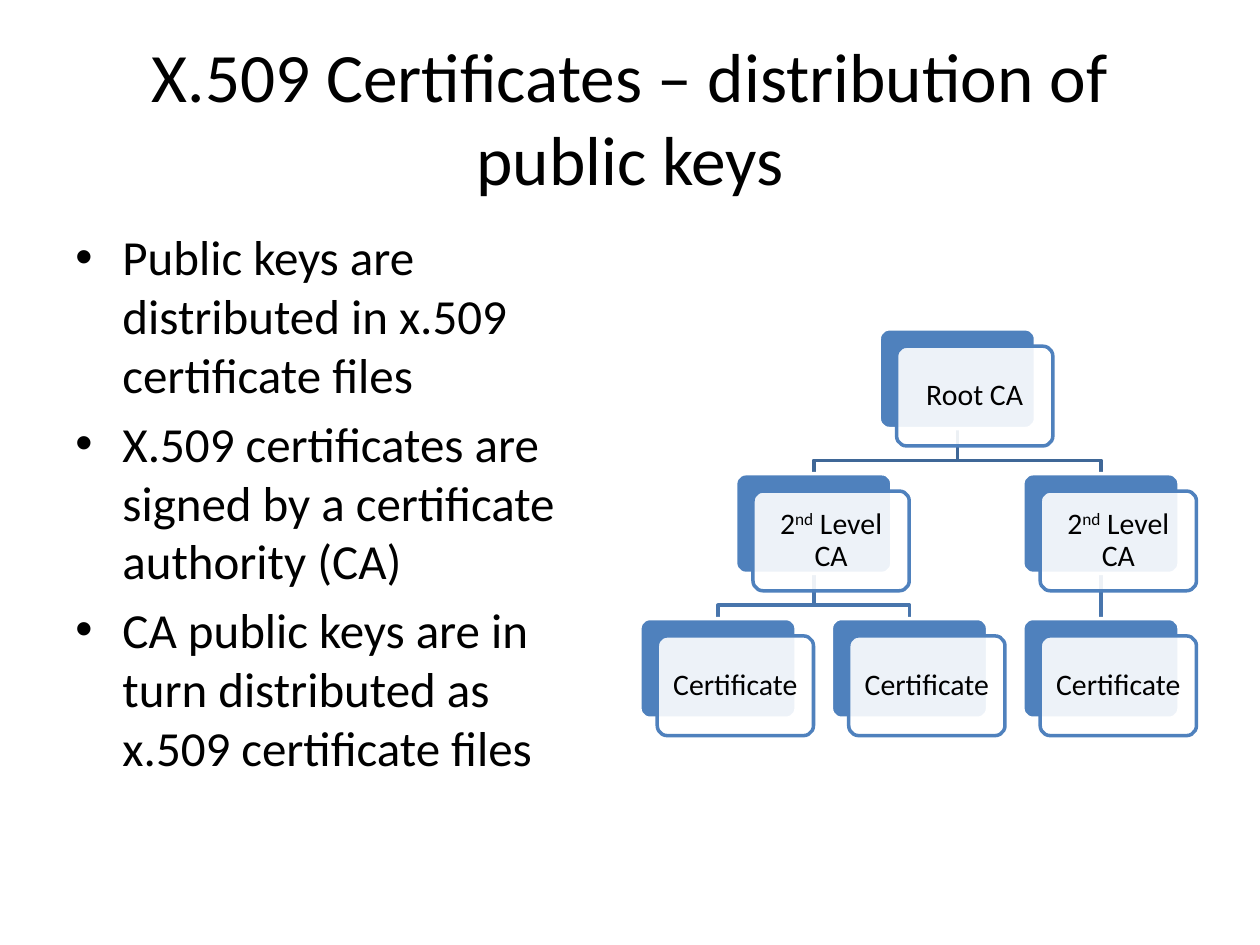
from dataclasses import dataclass

from lxml.etree import SubElement
from pptx import Presentation
from pptx.dml.color import RGBColor
from pptx.enum.shapes import MSO_CONNECTOR, MSO_SHAPE
from pptx.enum.text import MSO_ANCHOR, MSO_AUTO_SIZE, PP_ALIGN
from pptx.oxml.ns import qn
from pptx.util import Cm, Pt


@dataclass(frozen=True)
class Theme:
    font: str = "Calibri"
    ink: str = "000000"
    paper: str = "FFFFFF"
    blue: str = "4F81BD"
    upper: str = "3F6797"
    lower: str = "4875AC"
    title: float = 39.6
    body: float = 28
    label: float = 17
    line: float = 2


# Tree grid in cm: column and row pitch, box size, offset of the front card
LEFT, TOP, COL, ROW = 12.9, 6.63, 3.86, 2.92
WIDE, HIGH, SHIFT, DROP = 3.15, 2.01, 0.35, 0.64

# Node name: (column, row, text runs with a superscript flag)
SECOND = [("2", False), ("nd", True), (" Level CA", False)]
LEAF = [("Certificate", False)]
NODES = {
    "root": (1.25, 0, [("Root CA", False)]),
    "left": (0.5, 1, SECOND),
    "leaf1": (0, 2, LEAF),
    "leaf2": (1, 2, LEAF),
    "right": (2, 1, SECOND),
    "leaf3": (2, 2, LEAF),
}
LINKS = [("right", "leaf3"), ("root", "right"), ("left", "leaf2"),
         ("left", "leaf1"), ("root", "left")]
POINTS = [
    "Public keys are distributed in x.509 certificate files",
    "X.509 certificates are signed by a certificate authority (CA)",
    "CA public keys are in turn distributed as x.509 certificate files",
]


def corner(name):
    col, row, _ = NODES[name]
    return LEFT + col * COL, TOP + row * ROW


class Deck:
    def __init__(self, theme, slide):
        self.theme, self.slide = theme, slide
        self.shapes = slide.shapes

    def style(self, font, size):
        look = {"name": self.theme.font, "size": Pt(size), "bold": False}
        for key, value in look.items():
            setattr(font, key, value)
        font.color.rgb = RGBColor.from_string(self.theme.ink)

    def frame(self, shape, **look):
        for key, value in look.items():
            setattr(shape.text_frame, key, value)
        return shape.text_frame

    def outline(self, shape, color):
        shape.line.color.rgb = RGBColor.from_string(color)
        shape.line.width = Pt(self.theme.line)

    def title(self, text, left, top, width, height):
        shape = self.shapes.title
        box = {"left": left, "top": top, "width": width, "height": height}
        for key, value in box.items():
            setattr(shape, key, Cm(value))
        frame = self.frame(shape, text=text, word_wrap=True,
                           auto_size=MSO_AUTO_SIZE.NONE,
                           vertical_anchor=MSO_ANCHOR.MIDDLE)
        para = frame.paragraphs[0]
        para.alignment = PP_ALIGN.CENTER
        self.style(para.runs[0].font, self.theme.title)

    def bullets(self, items, *box):
        shape = self.shapes.add_textbox(*map(Cm, box))
        frame = self.frame(shape, text="\n".join(items), word_wrap=True)
        for para in frame.paragraphs:
            para.space_before = Pt(self.theme.body * 0.2)
            self.style(para.runs[0].font, self.theme.body)
            props = para._p.get_or_add_pPr()
            props.set("marL", str(Cm(0.95)))
            props.set("indent", str(-Cm(0.95)))
            SubElement(props, qn("a:buFont"), typeface="Arial")
            SubElement(props, qn("a:buChar"), char="•")

    def card(self, left, top, fill, line):
        shape = self.shapes.add_shape(MSO_SHAPE.ROUNDED_RECTANGLE,
                                      *map(Cm, (left, top, WIDE, HIGH)))
        shape.adjustments[0] = 0.1
        shape.shadow.inherit = False
        shape.fill.solid()
        shape.fill.fore_color.rgb = RGBColor.from_string(fill)
        self.outline(shape, line)
        return shape

    def node(self, left, top, runs):
        theme = self.theme
        back = self.card(left, top, theme.blue, theme.paper)
        front = self.card(left + SHIFT, top + SHIFT, theme.paper, theme.blue)
        tint = front.fill._xPr.find(qn("a:solidFill"))[0]
        SubElement(tint, qn("a:alpha"), val="90000")
        pad = {"margin_" + side: Cm(0.18)
               for side in ("left", "top", "right", "bottom")}
        frame = self.frame(front, word_wrap=True,
                           vertical_anchor=MSO_ANCHOR.MIDDLE, **pad)
        para = frame.paragraphs[0]
        para.alignment, para.line_spacing = PP_ALIGN.CENTER, 0.9
        for text, raised in runs:
            run = para.add_run()
            run.text = text
            self.style(run.font, theme.label)
            if raised:
                run.font._element.set("baseline", "30000")
        return back

    def straight(self, start, end, color):
        link = self.shapes.add_connector(MSO_CONNECTOR.STRAIGHT,
                                         *map(Cm, start + end))
        self.outline(link, color)
        SubElement(link._element.spPr, qn("a:effectLst"))
        return link

    def branch(self, start, end, color):
        (x, y), (tox, toy) = start, end
        bend = y + DROP
        pen = self.shapes.build_freeform(Cm(x), Cm(y))
        pen.add_line_segments([(Cm(x), Cm(bend)), (Cm(tox), Cm(bend)),
                               (Cm(tox), Cm(toy))], close=False)
        link = pen.convert_to_shape()
        link.fill.background()
        link.shadow.inherit = False
        self.outline(link, color)


def main():
    show = Presentation()
    show.slide_width, show.slide_height = Cm(25.4), Cm(19.05)
    theme = Theme()
    deck = Deck(theme, show.slides.add_slide(show.slide_layouts[5]))

    # Heading and bullet list
    deck.title("X.509 Certificates – distribution of public keys",
               1.27, 0.76, 22.86, 3.18)
    deck.bullets(POINTS, 1.27, 4.45, 11.23, 12.57)

    # Links lie behind the cards
    joins = []
    for parent, child in LINKS:
        (x, y), (tox, toy) = corner(parent), corner(child)
        start, end = (x + WIDE / 2, y + HIGH), (tox + WIDE / 2, toy)
        color = theme.upper if parent == "root" else theme.lower
        if x == tox:
            joins.append((deck.straight(start, end, color), parent, child))
        else:
            deck.branch(start, end, color)

    # Cards of the certificate tree
    cards = {name: deck.node(*corner(name), runs)
             for name, (_, _, runs) in NODES.items()}
    for link, parent, child in joins:
        link.begin_connect(cards[parent], 2)
        link.end_connect(cards[child], 0)

    show.save("out.pptx")


if __name__ == "__main__":
    main()
